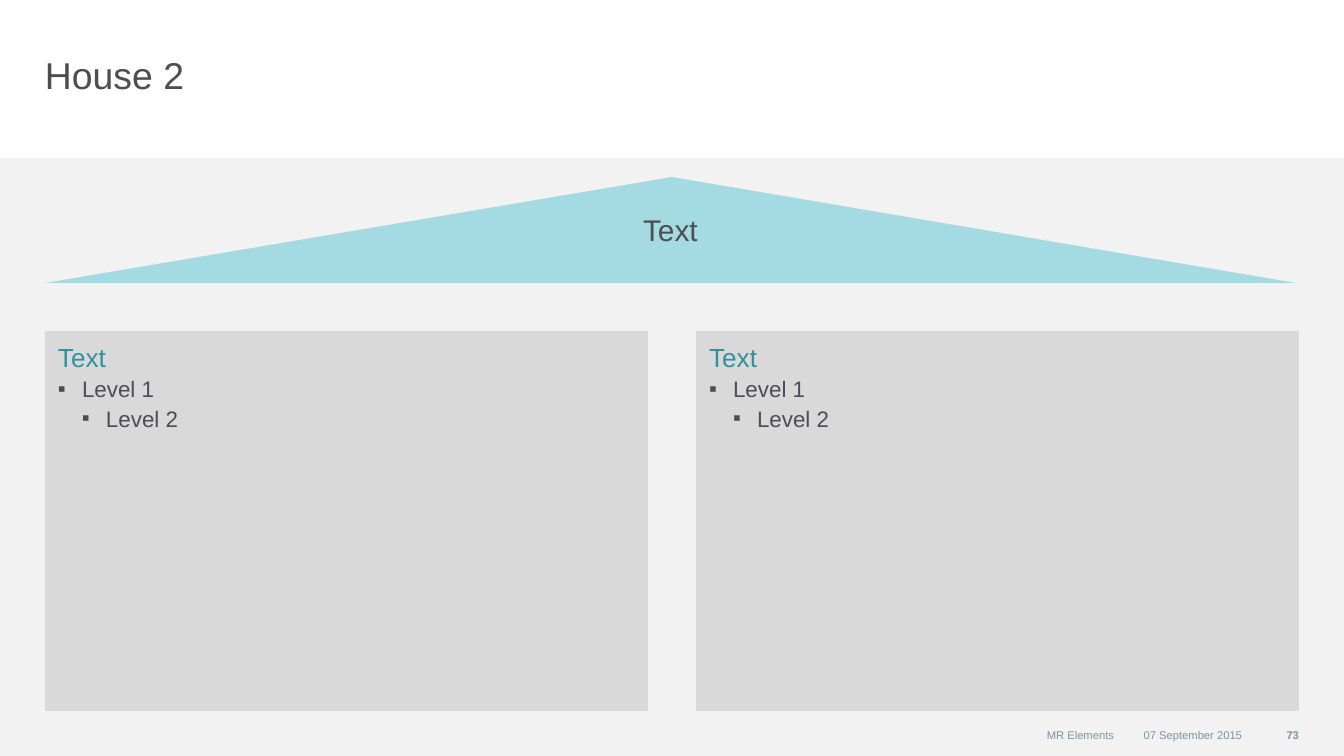
"""Build the "House 2" slide: a roof above two text panels."""
from lxml.etree import SubElement
from pptx import Presentation
from pptx.dml.color import RGBColor
from pptx.enum.shapes import MSO_SHAPE
from pptx.enum.text import MSO_ANCHOR, MSO_AUTO_SIZE, PP_ALIGN
from pptx.oxml.ns import qn
from pptx.util import Emu, Pt

DARK = RGBColor(0x4D, 0x4E, 0x53)
TEAL = RGBColor(0x34, 0x90, 0x9C)
AQUA = RGBColor(0xA4, 0xDA, 0xE1)
PALE = RGBColor(0xF2, 0xF2, 0xF2)
GREY = RGBColor(0xD9, 0xD9, 0xD9)
SLATE = RGBColor(0x7A, 0x94, 0xA3)

TITLE = "House 2"
ROOF = "Text"
LINES = [("Text", 0, 14, TEAL), ("Level 1", 1, 12, DARK), ("Level 2", 2, 12, DARK)]
PANELS = [LINES, LINES]
FOOTER = [("MR Elements", 585, 529, False), ("07 September 2015", 1120, 122, False),
          ("73", 1242, 57, True)]

WIDTH, HEIGHT = 1344, 756
LEFT, RIGHT, GAP = 45, 1299, 48
BAND = 158
PEAK, EAVES, EDGE = 177, 283, 1296
TOP, BASE = 331, 711
STEP = 24


def px(n):
    return Emu(round(n * 9144000 / WIDTH))


def place(shape, *box):
    shape.left, shape.top, shape.width, shape.height = map(px, box)


def paint(shape, color):
    shape.fill.solid()
    shape.fill.fore_color.rgb = color
    shape.line.fill.background()


def setup(frame, anchor, side=0, end=0):
    frame.word_wrap = True
    frame.auto_size = MSO_AUTO_SIZE.NONE
    frame.vertical_anchor = anchor
    frame.margin_left = frame.margin_right = px(side)
    frame.margin_top = frame.margin_bottom = px(end)


def style(para, size, color, align=PP_ALIGN.LEFT, bold=False):
    para.alignment = align
    font = para.font
    font.name, font.size, font.bold = "Arial", Pt(size), bold
    font.color.rgb = color


def bullet(para, level):
    props = para._p.get_or_add_pPr()
    props.set("marL", str(px(STEP * level)))
    props.set("indent", str(-px(STEP) if level else 0))
    if level:
        SubElement(props, qn("a:buFont"), typeface="Arial")
        SubElement(props, qn("a:buChar"), char="▪")
    else:
        SubElement(props, qn("a:buNone"))


def fill_panel(panel, lines):
    frame = panel.text_frame
    setup(frame, MSO_ANCHOR.TOP, 13, 7)
    frame.text = "\n".join(line[0] for line in lines)
    for para, (_, level, size, color) in zip(frame.paragraphs, lines):
        bullet(para, level)
        para.line_spacing = 1.1
        para.space_before = Pt(0)
        style(para, size, color)


def main():
    deck = Presentation()
    deck.slide_width, deck.slide_height = px(WIDTH), px(HEIGHT)
    slide = deck.slides.add_slide(deck.slide_layouts[3])
    shapes = slide.shapes
    title, *bodies = slide.placeholders

    band = shapes.add_shape(MSO_SHAPE.RECTANGLE, 0, px(BAND), px(WIDTH), px(HEIGHT - BAND))
    band.shadow.inherit = False
    paint(band, PALE)
    shapes._spTree.insert(2, band._element)

    place(title, LEFT, 52, 1005, 82)
    setup(title.text_frame, MSO_ANCHOR.TOP)
    title.text_frame.text = TITLE
    style(title.text_frame.paragraphs[0], 20, DARK)

    pen = shapes.build_freeform(px(LEFT), px(EAVES))
    pen.add_line_segments([(px(EDGE), px(EAVES)), (px(WIDTH / 2), px(PEAK))], close=True)
    roof = pen.convert_to_shape()
    roof.shadow.inherit = False
    paint(roof, AQUA)
    setup(roof.text_frame, MSO_ANCHOR.MIDDLE, 13, 7)
    roof.text_frame.text = ROOF
    style(roof.text_frame.paragraphs[0], 16, DARK, PP_ALIGN.CENTER)

    wide = (RIGHT - LEFT - GAP * (len(PANELS) - 1)) / len(PANELS)
    for i, (panel, lines) in enumerate(zip(bodies, PANELS)):
        place(panel, LEFT + i * (wide + GAP), TOP, wide, BASE - TOP)
        paint(panel, GREY)
        fill_panel(panel, lines)

    for text, left, width, bold in FOOTER:
        box = shapes.add_textbox(px(left), px(720), px(width), px(30))
        setup(box.text_frame, MSO_ANCHOR.MIDDLE)
        box.text_frame.text = text
        style(box.text_frame.paragraphs[0], 6, SLATE, PP_ALIGN.RIGHT, bold)

    deck.save("out.pptx")


if __name__ == "__main__":
    main()
